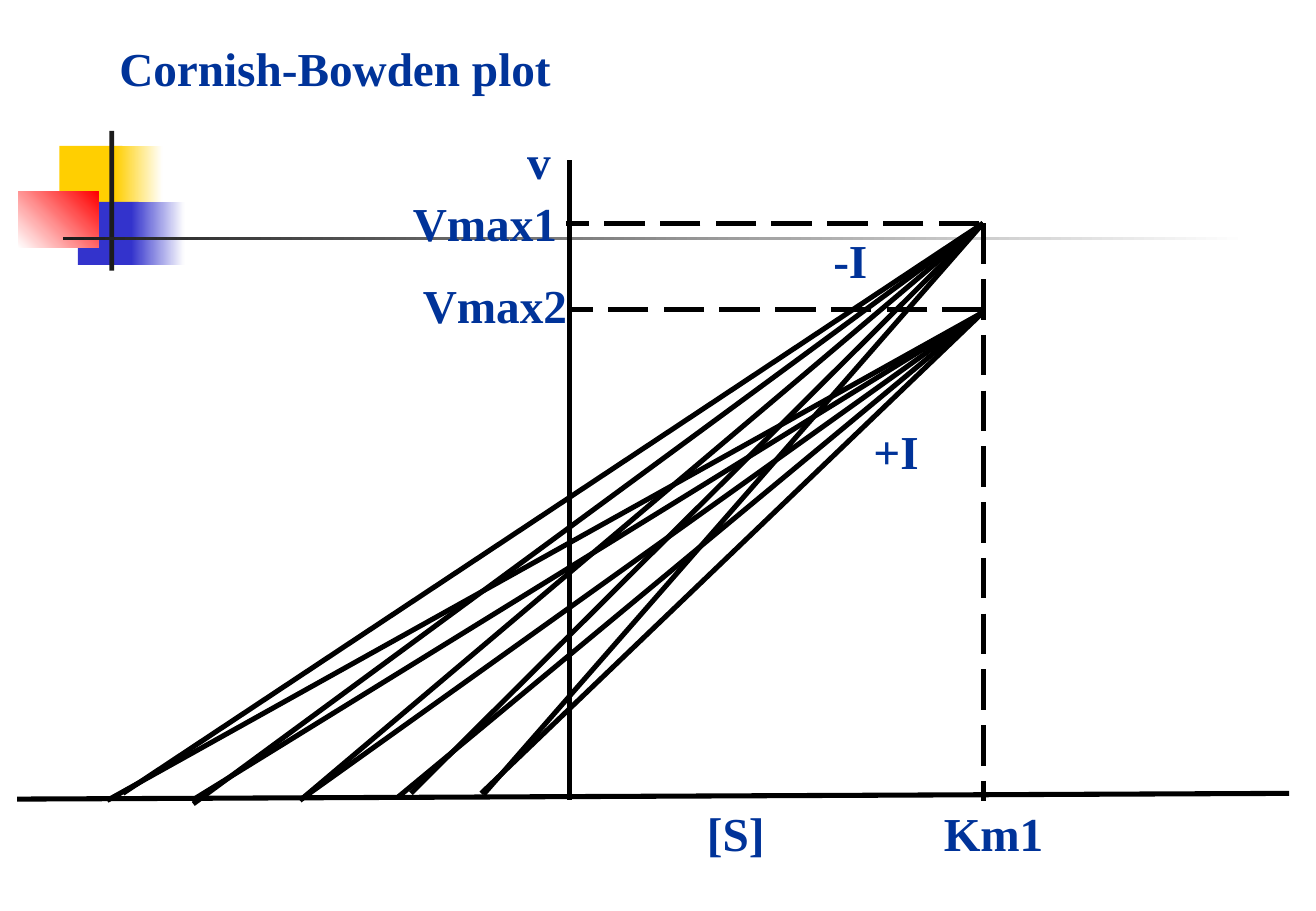
from lxml import etree
from pptx import Presentation
from pptx import util as u
from pptx.dml.color import RGBColor
from pptx.enum import dml, shapes, text
from pptx.oxml.ns import qn

Cm = u.Cm


def rgb(value):
    return RGBColor.from_string(value)


def format_text(tf, words):
    tf.text = words
    tf.vertical_anchor = text.MSO_ANCHOR.TOP
    p = tf.paragraphs[0]
    p.alignment = text.PP_ALIGN.LEFT
    p.font.name = "Times New Roman"
    p.font.size = u.Pt(28)
    p.font.bold = True
    p.font.color.rgb = rgb("003399")


prs = Presentation()
prs.slide_width, prs.slide_height = Cm(27.51), Cm(19.05)
s = prs.slides.add_slide(prs.slide_layouts[5])

title = s.shapes.title
title.left, title.top, title.width, title.height = Cm(2.24), Cm(0.69), Cm(25.27), Cm(1.45)
format_text(title.text_frame, "Cornish-Bowden plot")
title.text_frame.auto_size = text.MSO_AUTO_SIZE.NONE

# Corner ornament: left, top, width, height, colours, gradient angle
ornament = [
    (1.24, 3.05, 1.32, 1.32, ["FFCF01"], 0),
    (2.41, 3.05, 0.99, 1.32, ["FFCF01", "FFFFFF"], 0),
    (1.63, 4.22, 1.27, 1.32, ["3333CC"], 0),
    (2.74, 4.22, 1.12, 1.32, ["3333CC", "FFFFFF"], 0),
    (0.38, 4.01, 1.68, 1.17, ["FFFFFF", "FF0000"], 45),
    (2.29, 2.74, 0.1, 2.92, ["1C1C1C"], 0),
    (1.32, 4.95, 24.77, 0.08, ["1C1C1C", "FFFFFF"], 0),
]
for left, top, width, height, colours, angle in ornament:
    sp = s.shapes.add_shape(shapes.MSO_SHAPE.RECTANGLE, Cm(left), Cm(top), Cm(width), Cm(height))
    sp.shadow.inherit = False
    sp.line.fill.background()
    if len(colours) == 1:
        sp.fill.solid()
        sp.fill.fore_color.rgb = rgb(colours[0])
    else:
        sp.fill.gradient()
        sp.fill.gradient_angle = angle
        for stop, colour in zip(sp.fill.gradient_stops, colours):
            stop.color.rgb = rgb(colour)

# Each fan of lines runs from one (Km, Vmax) point down to the [S] axis
km, vmax1, vmax2 = 20.55, 4.67, 6.53
fans = {
    vmax1: [(2.57, 16.59), (4.04, 16.81), (6.27, 16.74), (8.59, 16.59), (10.11, 16.61)],
    vmax2: [(2.24, 16.74), (4.09, 16.69), (6.3, 16.71), (8.33, 16.66), (10.06, 16.59)],
}
axes = [(11.91, 3.35, 11.91, 16.74), (26.95, 16.59, 0.36, 16.71)]
guides = [
    (km, vmax1, km, 16.76),
    (km, 6.48, 11.91, 6.48),
    (20.47, vmax1, 11.84, vmax1),
]
rays = [(km, vmax, x, y) for vmax, feet in fans.items() for x, y in feet]
for ends in axes + rays + guides:
    line = s.shapes.add_connector(shapes.MSO_CONNECTOR.STRAIGHT, *[Cm(v) for v in ends])
    line.line.color.rgb = rgb("000000")
    line.line.width = u.Pt(3)
    if ends in guides:
        line.line.dash_style = dml.MSO_LINE.LONG_DASH
    etree.SubElement(line.element.spPr, qn("a:effectLst"))

labels = [
    ("v", 10.77, 2.64, 1.02),
    ("Vmax1", 8.38, 3.94, 3.56),
    ("Vmax2", 8.59, 5.66, 3.56),
    ("-I", 17.17, 4.72, 1.24),
    ("+I", 18.01, 8.71, 1.47),
    ("[S]", 14.53, 16.69, 1.73),
    ("Km1", 19.48, 16.69, 2.62),
]
for words, left, top, width in labels:
    tf = s.shapes.add_textbox(Cm(left), Cm(top), Cm(width), Cm(1.45)).text_frame
    tf.word_wrap = False
    format_text(tf, words)

prs.save("out.pptx")
